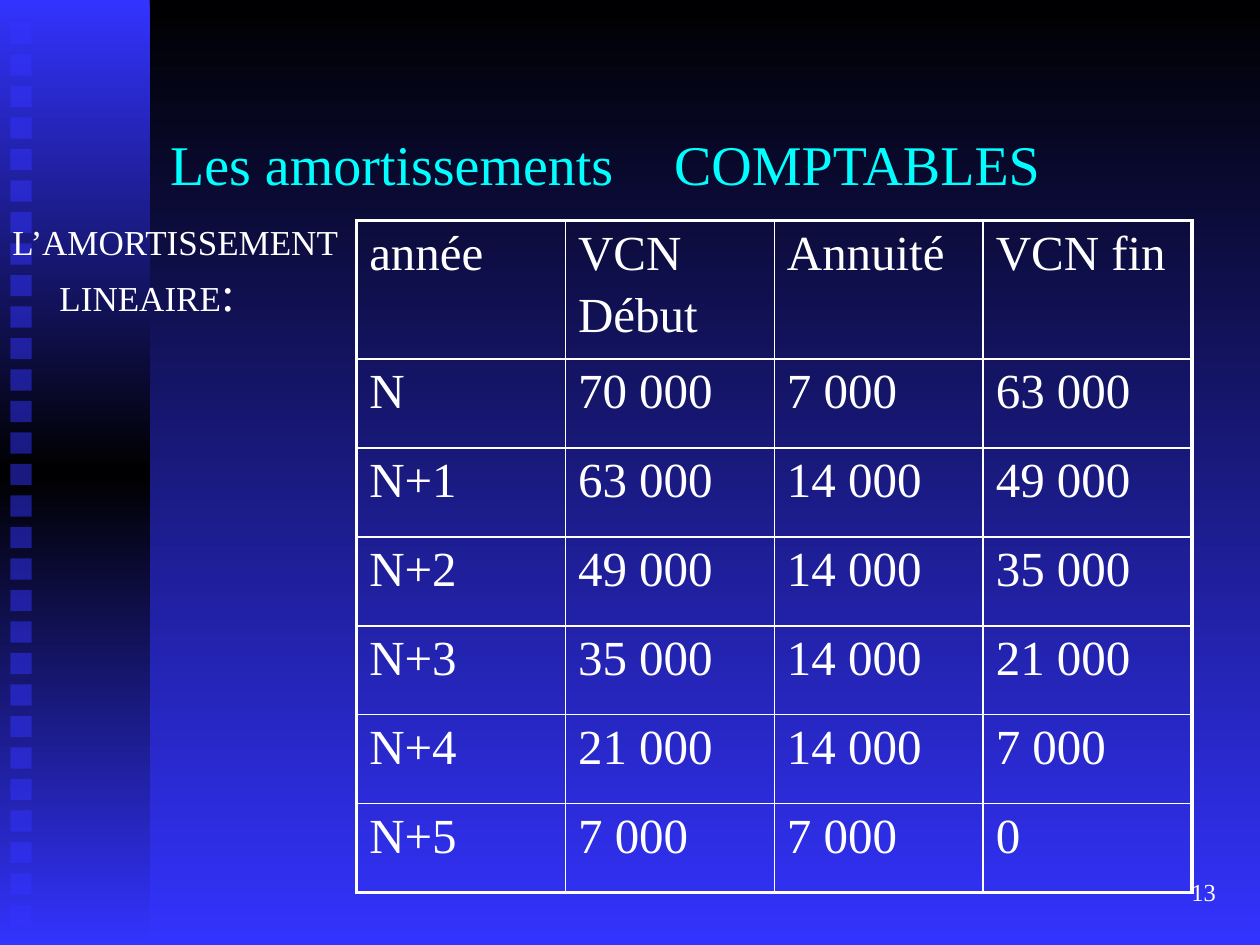
from lxml.etree import SubElement
from pptx import Presentation
from pptx.dml.color import RGBColor
from pptx.enum.shapes import MSO_SHAPE as Shape
from pptx.enum.text import MSO_ANCHOR as Anchor, PP_ALIGN as Align
from pptx.oxml.ns import qn
from pptx.util import Cm, Pt

COLORS = {"night": "000000", "blue": "3333FF", "title": "00FFFF", "text": "FFFFFF"}
FONT = "Times New Roman"
ROWS = [
    ("année", "VCN\nDébut", "Annuité", "VCN fin"),
    ("N", "70 000", "7 000", "63 000"),
    ("N+1", "63 000", "14 000", "49 000"),
    ("N+2", "49 000", "14 000", "35 000"),
    ("N+3", "35 000", "14 000", "21 000"),
    ("N+4", "21 000", "14 000", "7 000"),
    ("N+5", "7 000", "7 000", "0"),
]


def rgb(name):
    return RGBColor.from_string(COLORS[name])


def shade(fill, root, names):
    """Fill from top to bottom with evenly spaced colours."""
    fill.gradient()
    fill.gradient_angle = 270
    stops = next(root.iter(qn("a:gsLst")))
    for stop in list(stops):
        stops.remove(stop)
    for i, name in enumerate(names):
        stop = SubElement(stops, qn("a:gs"), pos=str(100000 * i // (len(names) - 1)))
        SubElement(stop, qn("a:srgbClr"), val=COLORS[name])


def write(frame, text, size=28, color="text", align=Align.LEFT, gap=0, hang=0, tail="", tail_size=28):
    """Write one paragraph per line; the tail closes the last one in its own size."""
    frame.word_wrap = True
    for i, line in enumerate(text.split("\n")):
        para = frame.paragraphs[0] if i == 0 else frame.add_paragraph()
        para.alignment = align
        para.space_before = Pt(gap)
        if hang:
            props = para._p.get_or_add_pPr()
            props.set("marL", str(Cm(hang)))
            props.set("indent", str(-Cm(hang)))
        add_run(para, line, size, color)
    if tail:
        add_run(para, tail, tail_size, color)


def add_run(para, text, size, color):
    run = para.add_run()
    run.text = text
    run.font.name = FONT
    run.font.size = Pt(size)
    run.font.color.rgb = rgb(color)


def add_text(slide, box, text, anchor=Anchor.TOP, **style):
    frame = slide.shapes.add_textbox(*map(Cm, box)).text_frame
    frame.vertical_anchor = anchor
    write(frame, text, **style)


def add_rect(slide, box):
    rect = slide.shapes.add_shape(Shape.RECTANGLE, *map(Cm, box))
    rect.shadow.inherit = False
    rect.line.fill.background()
    return rect


def add_band(slide, box, count=29, side=0.43):
    """Side band with a column of half-transparent squares."""
    left, top, width, height = box
    band = add_rect(slide, box)
    shade(band.fill, band._element, ("blue", "night", "blue"))
    first, last = top + 0.46, top + height - 0.81
    step = (last - first) / (count - 1)
    for i in range(count):
        square = add_rect(slide, (left + 0.21, first + i * step, side, side))
        square.fill.solid()
        square.fill.fore_color.rgb = rgb("blue")
        tint = next(square._element.spPr.iter(qn("a:srgbClr")))
        SubElement(tint, qn("a:alpha"), val="50000")


def set_border(cell, widths):
    props = cell._tc.get_or_add_tcPr()
    for i, (side, width) in enumerate(widths.items()):
        line = SubElement(props, qn("a:ln" + side), w=str(Pt(width)))
        fill = SubElement(line, qn("a:solidFill"))
        SubElement(fill, qn("a:srgbClr"), val=COLORS["text"])
        props.insert(i, line)


def add_grid(slide, box, head=2.64, thick=2.25, thin=1):
    left, top, width, height = box
    rows, cols = len(ROWS), len(ROWS[0])
    table = slide.shapes.add_table(rows, cols, *map(Cm, box)).table
    table.first_row = table.horz_banding = False
    for col in table.columns:
        col.width = Cm(width / cols)
    for r, values in enumerate(ROWS):
        table.rows[r].height = Cm(head if r == 0 else (height - head) / (rows - 1))
        for c, value in enumerate(values):
            cell = table.cell(r, c)
            cell.fill.background()
            edges = {"L": c == 0, "R": c == cols - 1, "T": r == 0, "B": r == rows - 1}
            set_border(cell, {side: thick if outer else thin for side, outer in edges.items()})
            write(cell.text_frame, value, gap=4.5)


def main():
    deck = Presentation()
    deck.slide_width, deck.slide_height = Cm(25.4), Cm(19.05)
    slide = deck.slides.add_slide(deck.slide_layouts[6])
    shade(slide.background.fill, slide._element, ("night", "blue"))
    add_band(slide, (0, 0, 3.02, 19.05))
    add_text(slide, (3.18, 1.7, 21.59, 3.18), "Les amortissements \tCOMPTABLES",
             anchor=Anchor.MIDDLE, size=32, color="title")
    add_text(slide, (0, 4.32, 7.49, 2.39), "L’AMORTISSEMENT LINEAIRE",
             size=20, gap=4.5, hang=0.95, tail=":")
    add_grid(slide, (7.19, 4.45, 16.84, 13.4))
    add_text(slide, (19.48, 17.35, 5.28, 1.27), "13",
             anchor=Anchor.MIDDLE, size=14, align=Align.RIGHT)
    deck.save("out.pptx")


if __name__ == "__main__":
    main()
